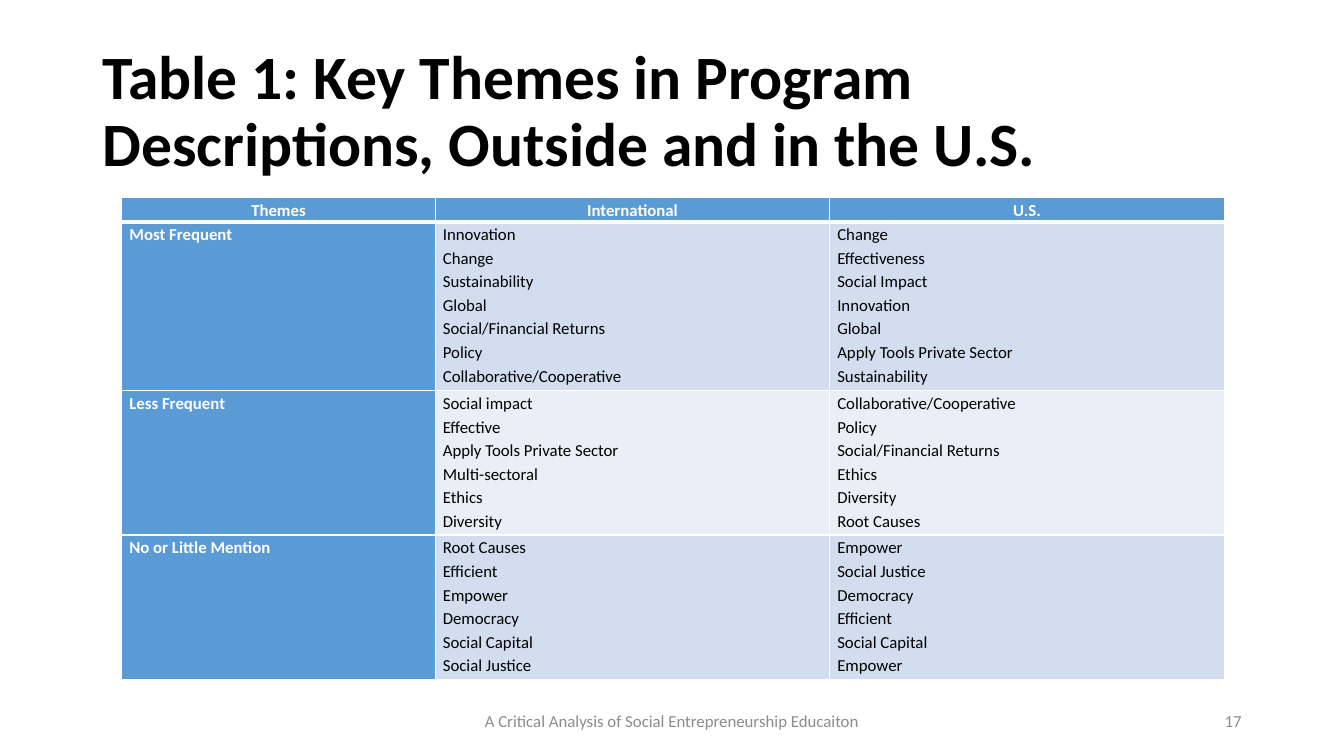
from lxml.etree import SubElement
from pptx import Presentation
from pptx.dml.color import RGBColor
from pptx.enum.text import MSO_ANCHOR, MSO_AUTO_SIZE, PP_ALIGN
from pptx.oxml.ns import qn
from pptx.util import Cm, Pt

WHITE, BLACK, GREY = "FFFFFF", "000000", "8C8C8C"
BLUE, PALE_BLUE, PALEST_BLUE = "5B9BD5", "D2DEEF", "EAEFF7"

HEADINGS = ["Themes", "International", "U.S."]
FREQUENCIES = [
    ("Most Frequent",
     ["Innovation", "Change", "Sustainability", "Global",
      "Social/Financial Returns", "Policy", "Collaborative/Cooperative"],
     ["Change", "Effectiveness", "Social Impact", "Innovation", "Global",
      "Apply Tools Private Sector", "Sustainability"]),
    ("Less Frequent",
     ["Social impact", "Effective", "Apply Tools Private Sector",
      "Multi-sectoral", "Ethics", "Diversity"],
     ["Collaborative/Cooperative", "Policy", "Social/Financial Returns",
      "Ethics", "Diversity", "Root Causes"]),
    ("No or Little Mention",
     ["Root Causes", "Efficient", "Empower", "Democracy", "Social Capital",
      "Social Justice"],
     ["Empower", "Social Justice", "Democracy", "Efficient", "Social Capital",
      "Empower"]),
]
COLUMN_WIDTHS = [7.9, 9.94, 9.94]
ROW_HEIGHTS = [0.61, 4.25, 3.64, 3.64]


def rgb(code):
    """Turn a hex string into a colour."""
    return RGBColor.from_string(code)


def format_text(frame, size, color, bold=False, align=PP_ALIGN.LEFT, spacing=1.0):
    """Format every paragraph and run of a text frame."""
    for paragraph in frame.paragraphs:
        paragraph.alignment = align
        paragraph.line_spacing = spacing
        for run in paragraph.runs:
            run.font.name = "Calibri"
            run.font.size = Pt(size)
            run.font.bold = bold
            run.font.color.rgb = rgb(color)


def add_title(slide, text):
    """Place and format the slide title."""
    title = slide.shapes.title
    title.left, title.top = Cm(2.33), Cm(1.01)
    title.width, title.height = Cm(29.21), Cm(3.68)
    frame = title.text_frame
    frame.text = text
    frame.word_wrap = True
    frame.auto_size = MSO_AUTO_SIZE.NONE
    frame.vertical_anchor = MSO_ANCHOR.MIDDLE
    format_text(frame, 44, BLACK, bold=True, spacing=0.9)


def add_footer(slide, text, left, width, align):
    """Add a grey text at the foot of the slide."""
    footer = slide.shapes.add_textbox(Cm(left), Cm(17.65), Cm(width), Cm(1.01))
    frame = footer.text_frame
    frame.text = text
    frame.word_wrap = True
    frame.vertical_anchor = MSO_ANCHOR.MIDDLE
    format_text(frame, 12, GREY, align=align)


def set_borders(cell, top, bottom):
    """Draw white borders around a cell, with top and bottom widths in points."""
    properties = cell._tc.get_or_add_tcPr()
    for side, width in (("L", 1), ("R", 1), ("T", top), ("B", bottom)):
        line = SubElement(properties, qn(f"a:ln{side}"), w=str(Pt(width)))
        fill = SubElement(line, qn("a:solidFill"))
        SubElement(fill, qn("a:srgbClr"), val=WHITE)


def fill_cell(cell, lines, fill, heading, align, top, bottom):
    """Write the lines of one cell and style it."""
    cell.margin_left = cell.margin_right = Cm(0.19)
    cell.margin_top = cell.margin_bottom = 0
    set_borders(cell, top, bottom)
    cell.fill.solid()
    cell.fill.fore_color.rgb = rgb(fill)
    cell.text_frame.text = "\n".join(lines)
    format_text(cell.text_frame, 12, WHITE if heading else BLACK, heading, align, 1.15)


def add_themes_table(slide):
    """Add the table of themes by frequency and region."""
    themes = slide.shapes.add_table(
        len(ROW_HEIGHTS), len(COLUMN_WIDTHS), Cm(3.07), Cm(4.98),
        Cm(sum(COLUMN_WIDTHS)), Cm(sum(ROW_HEIGHTS))).table
    for column, width in zip(themes.columns, COLUMN_WIDTHS):
        column.width = Cm(width)
    for row, height in zip(themes.rows, ROW_HEIGHTS):
        row.height = Cm(height)
    for index, heading in enumerate(HEADINGS):
        fill_cell(themes.cell(0, index), [heading], BLUE, True, PP_ALIGN.CENTER, 1, 3)
    for row, (frequency, *regions) in enumerate(FREQUENCIES, start=1):
        band = PALE_BLUE if row % 2 else PALEST_BLUE
        top = 3 if row == 1 else 1
        fill_cell(themes.cell(row, 0), [frequency], BLUE, True, PP_ALIGN.LEFT, top, 1)
        for index, region in enumerate(regions, start=1):
            fill_cell(themes.cell(row, index), region, band, False, PP_ALIGN.LEFT, top, 1)


def main():
    """Build and save the slide."""
    deck = Presentation()
    deck.slide_width, deck.slide_height = Cm(33.87), Cm(19.05)
    slide = deck.slides.add_slide(deck.slide_layouts[5])
    add_title(slide, "Table 1: Key Themes in Program Descriptions, Outside and in the U.S.")
    add_footer(slide, "A Critical Analysis of Social Entrepreneurship Educaiton",
               11.22, 11.43, PP_ALIGN.CENTER)
    add_footer(slide, "17", 23.92, 7.62, PP_ALIGN.RIGHT)
    add_themes_table(slide)
    deck.save("out.pptx")


if __name__ == "__main__":
    main()
